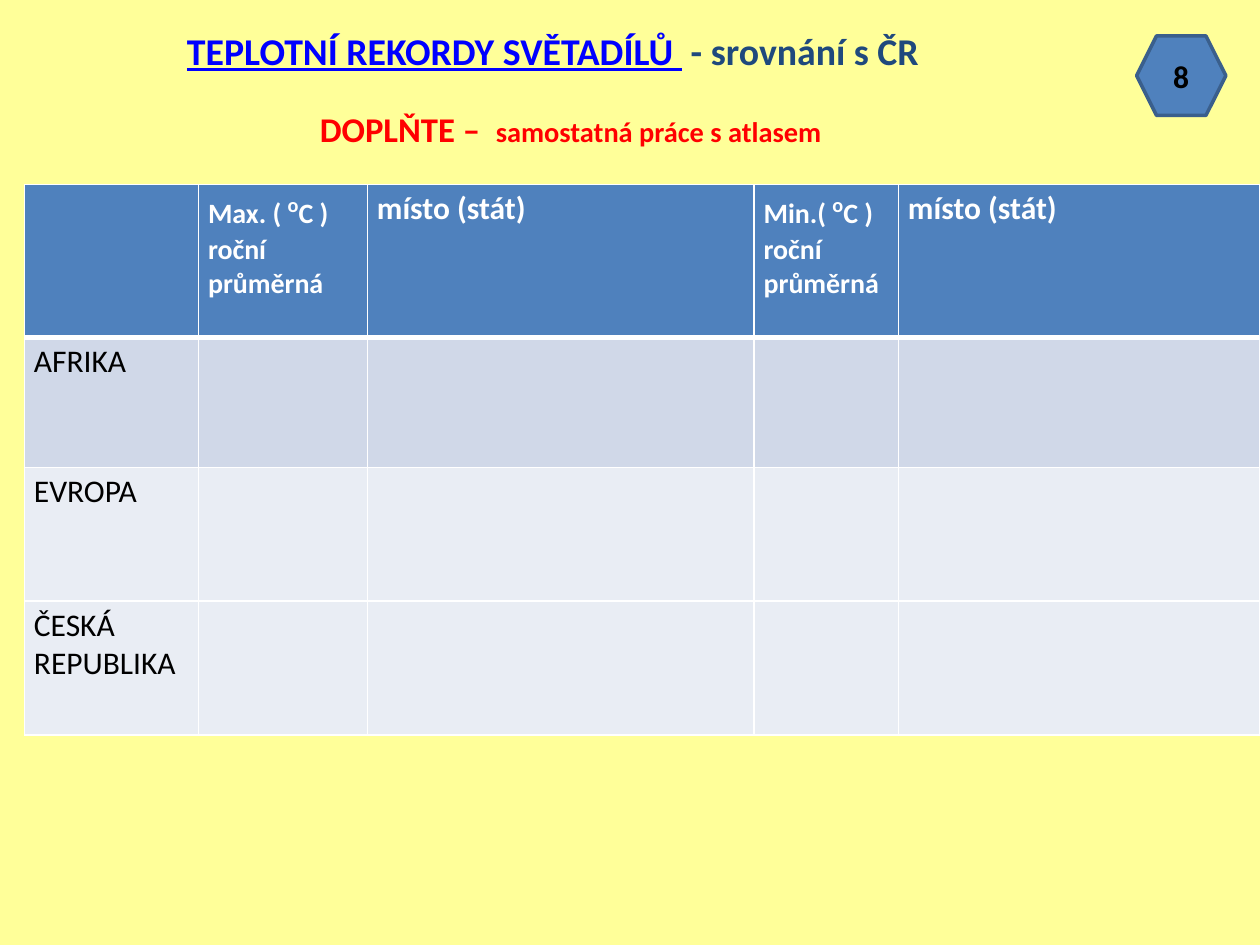
from lxml import etree
from pptx import Presentation
from pptx.dml.color import RGBColor
from pptx.enum.shapes import MSO_SHAPE
from pptx.enum.text import MSO_ANCHOR, PP_ALIGN
from pptx.oxml.ns import qn
from pptx.util import Pt

HEXAGON = MSO_SHAPE.HEXAGON
MIDDLE = MSO_ANCHOR.MIDDLE
CENTER = PP_ALIGN.CENTER
LEFT = PP_ALIGN.LEFT

YELLOW = RGBColor(0xFF, 0xFF, 0x99)
LINK_BLUE = RGBColor(0x00, 0x00, 0xFF)
NAVY = RGBColor(0x1F, 0x49, 0x7D)
RED = RGBColor(0xFF, 0x00, 0x00)
ACCENT = RGBColor(0x4F, 0x81, 0xBD)
OUTLINE = RGBColor(0x3A, 0x5F, 0x8C)
BAND_DARK = RGBColor(0xD0, 0xD8, 0xE8)
BAND_LIGHT = RGBColor(0xE9, 0xED, 0xF4)
WHITE = RGBColor(0xFF, 0xFF, 0xFF)
BLACK = RGBColor(0x00, 0x00, 0x00)


class SlideBuilder:
    """Draws styled elements on one slide, with all lengths in points."""

    font_name = "Calibri"

    def __init__(self, presentation, background):
        self.slide = presentation.slides.add_slide(presentation.slide_layouts[6])
        fill = self.slide.background.fill
        fill.solid()
        fill.fore_color.rgb = background

    def set_text(self, text_frame, lines, size, color, bold, alignment):
        """Set lines of (text, font settings) runs over shared paragraph fonts."""
        text_frame.word_wrap = True
        for index, runs in enumerate(lines):
            paragraph = text_frame.add_paragraph() if index else text_frame.paragraphs[0]
            paragraph.alignment = alignment
            paragraph.font.name = self.font_name
            paragraph.font.size = Pt(size)
            paragraph.font.bold = bold
            paragraph.font.color.rgb = color
            for text, settings in runs:
                run = paragraph.add_run()
                run.text = text
                if "size" in settings:
                    run.font.size = Pt(settings["size"])
                if "color" in settings:
                    run.font.color.rgb = settings["color"]
                if "underline" in settings:
                    run.font.underline = settings["underline"]
                if "baseline" in settings:
                    run._r.get_or_add_rPr().set("baseline", str(settings["baseline"]))

    def title(self, left, top, width, height, lines, size, color, last_indent):
        box = self.slide.shapes.add_textbox(Pt(left), Pt(top), Pt(width), Pt(height))
        frame = box.text_frame
        frame.margin_left = frame.margin_right = frame.margin_top = frame.margin_bottom = 0
        self.set_text(frame, lines, size, color, True, CENTER)
        properties = frame.paragraphs[-1]._p.get_or_add_pPr()
        properties.set("marL", str(Pt(last_indent)))

    def badge(self, left, top, width, height, text):
        shape = self.slide.shapes.add_shape(HEXAGON, Pt(left), Pt(top), Pt(width), Pt(height))
        shape.shadow.inherit = False
        shape.fill.solid()
        shape.fill.fore_color.rgb = ACCENT
        shape.line.color.rgb = OUTLINE
        shape.line.width = Pt(2)
        shape.text_frame.vertical_anchor = MIDDLE
        self.set_text(shape.text_frame, plain(text), 18, BLACK, True, CENTER)

    def borders(self, cell, widths):
        properties = cell._tc.get_or_add_tcPr()
        for side, width in widths.items():
            line = etree.SubElement(properties, qn(f"a:ln{side}"), w=str(Pt(width)))
            fill = etree.SubElement(line, qn("a:solidFill"))
            etree.SubElement(fill, qn("a:srgbClr"), val=str(WHITE))

    def table(self, left, top, column_widths, row_heights, rows, row_fills):
        frame = self.slide.shapes.add_table(
            len(row_heights), len(column_widths), Pt(left), Pt(top),
            Pt(sum(column_widths)), Pt(sum(row_heights)))
        table = frame.table
        table.first_row = table.horz_banding = False
        for column, width in zip(table.columns, column_widths):
            column.width = Pt(width)
        for index, (row, height, fill) in enumerate(zip(table.rows, row_heights, row_fills)):
            row.height = Pt(height)
            header = index == 0
            widths = {"L": 1, "R": 1, "T": 3 if index == 1 else 1, "B": 3 if header else 1}
            for column, cell in enumerate(row.cells):
                cell.margin_left = cell.margin_right = Pt(5.4)
                cell.margin_top = cell.margin_bottom = Pt(2.9)
                self.borders(cell, widths)
                cell.fill.solid()
                cell.fill.fore_color.rgb = fill
                lines = rows[index][column] if column < len(rows[index]) else []
                self.set_text(cell.text_frame, lines, 18, WHITE if header else BLACK, header, LEFT)


def temperature_heading(label):
    small = {"size": 16}
    return [
        [(f"{label}( ", small), ("o", {"size": 20, "baseline": 30000}), ("C )", small)],
        [("roční průměrná", small)],
    ]


def plain(*lines):
    return [[(line, {})] for line in lines]


def main():
    presentation = Presentation()
    presentation.slide_width = Pt(720)
    presentation.slide_height = Pt(540)
    builder = SlideBuilder(presentation, YELLOW)
    builder.title(0, 16, 632, 76, [
        [("TEPLOTNÍ REKORDY SVĚTADÍLŮ ", {"color": LINK_BLUE, "underline": True}),
         (" - srovnání s ČR", {})],
        [("DOPLŇTE –", {"size": 19.8, "color": RED}),
         (" ", {"size": 39.6}),
         ("samostatná práce s atlasem", {"size": 16.2, "color": RED})],
    ], 21.6, NAVY, 20)
    place = plain("místo (stát)")
    rows = [
        [[], temperature_heading("Max. "), place, temperature_heading("Min."), place],
        [plain("AFRIKA")],
        [plain("EVROPA")],
        [plain("ČESKÁ", "REPUBLIKA")],
    ]
    builder.table(14, 105.5, [99.5, 96.5, 221, 82.5, 206.5], [87.4, 74.2, 76.5, 76.5],
                  rows, [ACCENT, BAND_DARK, BAND_LIGHT, BAND_LIGHT])
    builder.badge(649.5, 20.5, 51, 45.5, "8")
    presentation.save("out.pptx")


if __name__ == "__main__":
    main()
